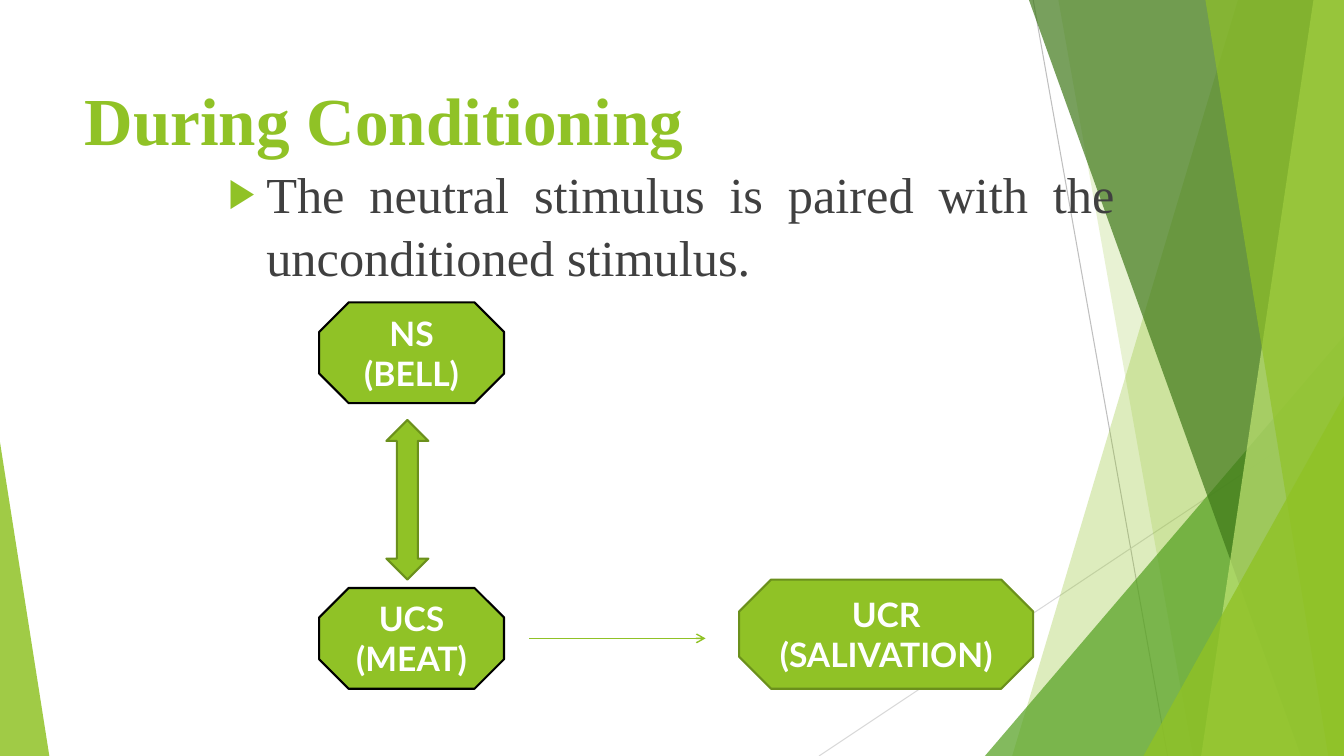
from dataclasses import dataclass

from lxml.etree import SubElement
from pptx import Presentation
from pptx.dml.color import RGBColor as Color
from pptx.enum.shapes import MSO_CONNECTOR as Connector, MSO_SHAPE as Preset
from pptx.enum.text import MSO_ANCHOR as Anchor, MSO_AUTO_SIZE as AutoSize, PP_ALIGN as Align
from pptx.oxml.ns import qn
from pptx.util import Emu, Pt

PX = 9525
WIDTH, HEIGHT = 1280, 720


@dataclass(frozen=True)
class Theme:
    green: str = "90C226"
    leaf: str = "54A021"
    forest: str = "3F7819"
    lime: str = "C0E474"
    olive: str = "6B901C"
    black: str = "000000"
    white: str = "FFFFFF"
    text: str = "404040"
    gray: str = "BFBFBF"
    pale_gray: str = "D9D9D9"
    serif: str = "Times New Roman"
    sans: str = "Lato"
    title_size: int = 48
    body_size: int = 36
    label_size: int = 24


THEME = Theme()


def px(*lengths):
    return [Emu(length * PX) for length in lengths]


def style_font(font, name, size, color, bold=False):
    font.name, font.size, font.bold = name, Pt(size), bold
    font.color.rgb = Color.from_string(color)


def paint(shape, fill, outline=None, opacity=100):
    shape.shadow.inherit = False
    shape.fill.solid()
    shape.fill.fore_color.rgb = Color.from_string(fill)
    if opacity < 100:
        color = shape.element.spPr.find(qn("a:solidFill")).find(qn("a:srgbClr"))
        SubElement(color, qn("a:alpha")).set("val", str(opacity * 1000))
    if outline:
        shape.line.color.rgb = Color.from_string(outline)
        shape.line.width = Pt(1.5)
    else:
        shape.line.fill.background()


def add_line(shapes, start, end, color, width):
    line = shapes.add_connector(Connector.STRAIGHT, *px(*start, *end))
    line.line.color.rgb = Color.from_string(color)
    line.line.width = Pt(width)
    SubElement(line.element.spPr, qn("a:effectLst"))
    return line


def add_facet(shapes, top_x, bottom_x, color, opacity):
    """Fill from a slanted left edge to the right side of the slide."""
    builder = shapes.build_freeform(top_x, 0, scale=PX)
    builder.add_line_segments([(WIDTH, 0), (WIDTH, HEIGHT), (bottom_x, HEIGHT)])
    paint(builder.convert_to_shape(), color, opacity=opacity)


def add_corner(shapes, left, width, height, apex, color, opacity):
    """Stand a right triangle on the bottom edge, its apex at 0 (left) or 1 (right)."""
    box = px(left, HEIGHT - height, width, height)
    triangle = shapes.add_shape(Preset.ISOSCELES_TRIANGLE, *box)
    triangle.adjustments[0] = apex
    paint(triangle, color, opacity=opacity)


def add_backdrop(page):
    group = page.shapes.add_group_shape()
    shapes = group.shapes
    add_line(shapes, (984, 0), (1112, HEIGHT), THEME.gray, 0.75)
    add_line(shapes, (WIDTH, 387), (780, HEIGHT), THEME.pale_gray, 0.75)
    add_facet(shapes, 1179, 964, THEME.green, 30)
    add_facet(shapes, 1008, 1136, THEME.green, 20)
    add_corner(shapes, 938, 342, 400, 1, THEME.leaf, 72)
    add_facet(shapes, 980, 1239, THEME.forest, 70)
    add_facet(shapes, 1251, 1144, THEME.lime, 70)
    add_facet(shapes, 1148, 1265, THEME.green, 65)
    add_corner(shapes, 1089, 191, 343, 1, THEME.green, 80)
    add_corner(shapes, 0, 47, 299, 0, THEME.green, 85)
    page.shapes.element.insert(2, group.element)  # behind the placeholders


def fill_placeholder(holder, box, text, inset_top):
    holder.left, holder.top, holder.width, holder.height = px(*box)
    frame = holder.text_frame
    frame.text = text
    frame.word_wrap = True
    frame.auto_size = AutoSize.NONE
    frame.vertical_anchor = Anchor.TOP
    frame.margin_top = Emu(inset_top * PX)
    para = frame.paragraphs[0]
    para.space_before = Pt(0)
    return para


def add_title(page, box, text):
    para = fill_placeholder(page.shapes.title, box, text, 11)
    para.alignment = Align.LEFT
    style_font(para.font, THEME.serif, THEME.title_size, THEME.green, bold=True)


def add_body(page, box, text):
    para = fill_placeholder(page.placeholders[1], box, text, 8)
    para.alignment = Align.JUSTIFY
    para.line_spacing = 1.05
    properties = para._p.get_or_add_pPr()
    properties.set("marL", str(36 * PX))
    properties.set("indent", str(-36 * PX))
    color = SubElement(properties, qn("a:buClr"))
    SubElement(color, qn("a:srgbClr")).set("val", THEME.green)
    SubElement(properties, qn("a:buSzPct")).set("val", "80000")
    SubElement(properties, qn("a:buChar")).set("char", "▶")
    style_font(para.font, THEME.serif, THEME.body_size, THEME.text)


def add_stimulus(page, box, text, outline):
    octagon = page.shapes.add_shape(Preset.OCTAGON, *px(*box))
    paint(octagon, THEME.green, outline)
    frame = octagon.text_frame
    frame.text = text
    frame.word_wrap = True
    for para in frame.paragraphs:
        para.alignment = Align.CENTER
        style_font(para.font, THEME.sans, THEME.label_size, THEME.white, bold=True)


def add_diagram(page, left, top):
    add_stimulus(page, (left + 400, top + 264, 280, 104), "UCR\n(SALIVATION)", THEME.olive)
    for offset, text in ((272, "UCS (MEAT)"), (0, "NS (BELL)")):
        add_stimulus(page, (left, top + offset, 176, 96), text, THEME.black)
    pairing = page.shapes.add_shape(Preset.UP_DOWN_ARROW, *px(left + 64, top + 112, 40, 152))
    paint(pairing, THEME.green, THEME.olive)
    response = add_line(page.shapes, (left + 200, top + 320), (left + 368, top + 320),
                        THEME.green, 1)
    SubElement(response.line._get_or_add_ln(), qn("a:tailEnd")).set("type", "arrow")


def main():
    deck = Presentation()
    deck.slide_width, deck.slide_height = px(WIDTH, HEIGHT)
    page = deck.slides.add_slide(deck.slide_layouts[1])
    add_backdrop(page)
    add_title(page, (71, 64, 902, 138), "During Conditioning")
    add_body(page, (208, 144, 864, 534),
             "The neutral stimulus is paired with the unconditioned stimulus.")
    add_diagram(page, 304, 288)
    deck.save("out.pptx")


if __name__ == "__main__":
    main()
